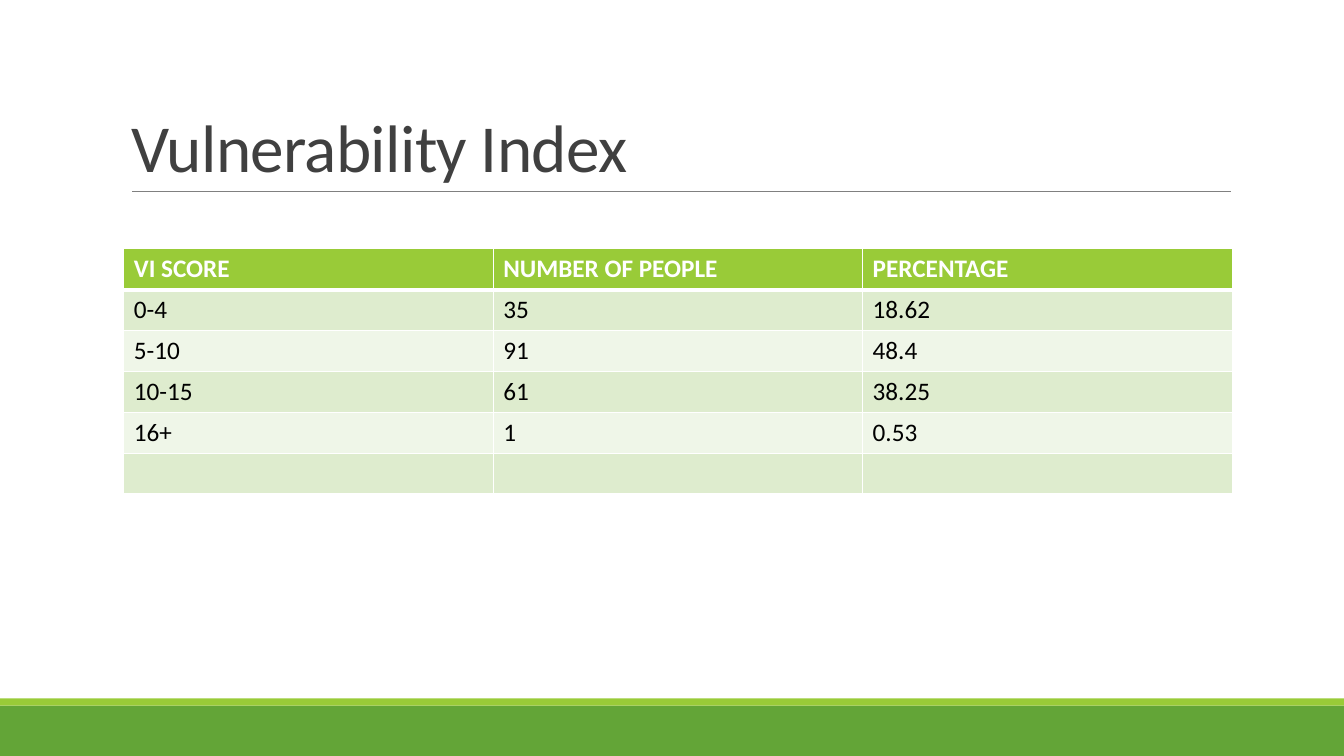
from dataclasses import dataclass

import pptx
import pptx.dml.color
import pptx.enum.shapes
import pptx.enum.text
import pptx.oxml
import pptx.oxml.ns
import pptx.util
from pptx.util import Cm

FONT = "Calibri"
WHITE = "FFFFFF"
GREEN = "63A537"
LIME = "99CB38"
SLIDE_WIDTH, SLIDE_HEIGHT = Cm(33.87), Cm(19.05)


@dataclass
class Band:
    top: float
    height: float
    color: str


@dataclass
class RowStyle:
    fill: str
    text: str
    bold: bool
    top_border: float
    bottom_border: float


FOOTER_BANDS = [Band(17.78, 1.27, GREEN), Band(17.6, 0.18, LIME)]

SCORES = [
    ("VI SCORE", "NUMBER OF PEOPLE", "PERCENTAGE"),
    ("0-4", "35", "18.62"),
    ("5-10", "91", "48.4"),
    ("10-15", "61", "38.25"),
    ("16+", "1", "0.53"),
    ("", "", ""),
]
COLUMN_WIDTH, ROW_HEIGHT = Cm(9.31), Cm(1.03)


def rgb(color: str) -> pptx.dml.color.RGBColor:
    return pptx.dml.color.RGBColor.from_string(color)


def set_font(paragraph, size: float, color: str, bold: bool = False) -> None:
    font = paragraph.font
    font.name, font.size, font.bold = FONT, pptx.util.Pt(size), bold
    font.color.rgb = rgb(color)


def draw_band(slide, band: Band) -> None:
    bar = slide.shapes.add_shape(
        pptx.enum.shapes.MSO_SHAPE.RECTANGLE,
        0, Cm(band.top), SLIDE_WIDTH, Cm(band.height))
    bar.shadow.inherit = False
    bar.fill.solid()
    bar.fill.fore_color.rgb = rgb(band.color)
    bar.line.fill.background()


def draw_title_rule(slide) -> None:
    rule = slide.shapes.add_connector(
        pptx.enum.shapes.MSO_CONNECTOR.STRAIGHT,
        Cm(3.33), Cm(4.83), Cm(31.01), Cm(4.83))
    rule.line.color.rgb = rgb("808080")
    rule.line.width = pptx.util.Pt(0.5)
    rule._element.spPr.append(pptx.oxml.parse_xml(
        f'<a:effectLst {pptx.oxml.ns.nsdecls("a")}/>'))


def write_title(slide, text: str) -> None:
    title = slide.shapes.title
    title.left, title.top = Cm(3.05), Cm(0.79)
    title.width, title.height = Cm(27.94), Cm(4.04)
    frame = title.text_frame
    frame.text = text
    frame.word_wrap = True
    frame.auto_size = pptx.enum.text.MSO_AUTO_SIZE.NONE
    frame.vertical_anchor = pptx.enum.text.MSO_ANCHOR.BOTTOM
    heading = frame.paragraphs[0]
    heading.alignment = pptx.enum.text.PP_ALIGN.LEFT
    heading.line_spacing = 0.85
    set_font(heading, 48, "404040")
    # Letter spacing in hundredths of a point
    heading.runs[0]._r.get_or_add_rPr().set("spc", "-50")


def set_borders(cell, style: RowStyle) -> None:
    widths = {"lnL": 1, "lnR": 1,
              "lnT": style.top_border, "lnB": style.bottom_border}
    for side, points in widths.items():
        cell._tc.get_or_add_tcPr().append(pptx.oxml.parse_xml(
            f'<a:{side} {pptx.oxml.ns.nsdecls("a")} w="{pptx.util.Pt(points)}">'
            f'<a:solidFill><a:srgbClr val="{WHITE}"/></a:solidFill></a:{side}>'))


def row_style(row: int) -> RowStyle:
    if row == 0:
        return RowStyle(LIME, WHITE, True, 1, 3)
    fill = "DEECCE" if row % 2 else "EFF6E8"
    return RowStyle(fill, "000000", False, 3 if row == 1 else 1, 1)


def draw_scores(slide) -> None:
    rows, columns = len(SCORES), len(SCORES[0])
    table = slide.shapes.add_table(
        rows, columns, Cm(3.12), Cm(6.27),
        COLUMN_WIDTH * columns, ROW_HEIGHT * rows).table
    for column in table.columns:
        column.width = COLUMN_WIDTH
    for row, values in enumerate(SCORES):
        table.rows[row].height = ROW_HEIGHT
        style = row_style(row)
        for column, value in enumerate(values):
            cell = table.cell(row, column)
            if value:
                cell.text = value
            set_font(cell.text_frame.paragraphs[0], 18, style.text, style.bold)
            set_borders(cell, style)
            cell.fill.solid()
            cell.fill.fore_color.rgb = rgb(style.fill)


def main() -> None:
    presentation = pptx.Presentation()
    presentation.slide_width = SLIDE_WIDTH
    presentation.slide_height = SLIDE_HEIGHT
    slide = presentation.slides.add_slide(
        presentation.slide_layouts.get_by_name("Title Only"))

    # Footer bands and the rule under the title
    for band in FOOTER_BANDS:
        draw_band(slide, band)
    draw_title_rule(slide)

    # Title and score table
    write_title(slide, "Vulnerability Index")
    draw_scores(slide)

    presentation.save("out.pptx")


if __name__ == "__main__":
    main()
